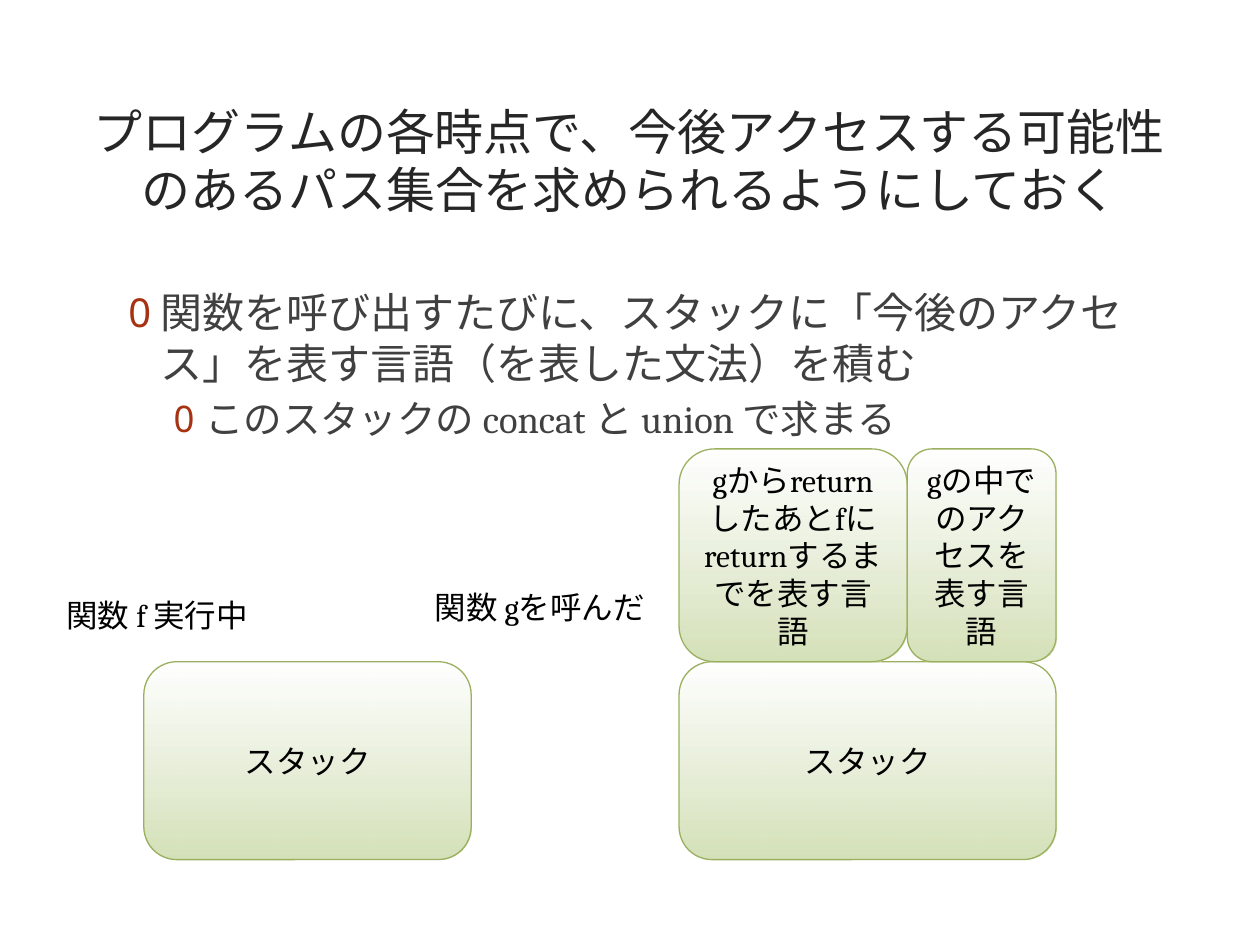
from dataclasses import dataclass

from lxml.etree import SubElement
from pptx import Presentation
from pptx.dml.color import RGBColor as RGB
from pptx.enum.lang import MSO_LANGUAGE_ID as LANG
from pptx.enum.shapes import MSO_SHAPE as SHAPE
from pptx.enum.text import MSO_ANCHOR as ANCHOR, MSO_AUTO_SIZE as FIT, PP_ALIGN as ALIGN
from pptx.oxml.ns import qn
from pptx.util import Cm, Pt


@dataclass(frozen=True)
class Theme:
    font: str = "Cambria"
    bullet_font: str = "Rage Italic"
    title: RGB = RGB(0x26, 0x26, 0x26)
    body: RGB = RGB(0x40, 0x40, 0x40)
    text: RGB = RGB(0, 0, 0)
    bullet: str = "A63212"
    box_top: RGB = RGB(0xFF, 0xFF, 0xFF)
    box_bottom: RGB = RGB(0xD5, 0xE1, 0xB9)
    box_line: RGB = RGB(0x9B, 0xB0, 0x5E)
    title_size: int = 28
    body_size: int = 24
    sub_size: int = 22
    label_size: int = 18


T = Theme()


def write(p, text, size=T.label_size, color=T.text, align=ALIGN.LEFT):
    p.alignment = align
    r = p.add_run()
    r.text = text
    r.font.name, r.font.size, r.font.color.rgb = T.font, Pt(size), color
    r.font.language_id = LANG.JAPANESE


def add_bullet(p, left, hanging):
    pPr = p._p.get_or_add_pPr()
    pPr.set("marL", str(left))
    pPr.set("indent", str(-hanging))
    SubElement(SubElement(pPr, qn("a:buClr")), qn("a:srgbClr"), val=T.bullet)
    SubElement(pPr, qn("a:buSzPct"), val="95000")
    SubElement(pPr, qn("a:buFont"), typeface=T.bullet_font)
    SubElement(pPr, qn("a:buChar"), char="0")


prs = Presentation()
prs.slide_width, prs.slide_height = Cm(25.4), Cm(19.05)
s = prs.slides.add_slide(prs.slide_layouts[5])

# Title
sp = s.shapes.title
sp.left, sp.top, sp.width, sp.height = Cm(1.52), Cm(1.22), Cm(22.33), Cm(4.01)
tf = sp.text_frame
tf.auto_size, tf.vertical_anchor = FIT.NONE, ANCHOR.MIDDLE
write(tf.paragraphs[0], "プログラムの各時点で、今後アクセスする可能性のあるパス集合を求められるようにしておく",
      size=T.title_size, color=T.title, align=ALIGN.CENTER)

# Bulleted explanation
tf = s.shapes.add_textbox(Cm(2.34), Cm(5.66), Cm(20.75), Cm(4.06)).text_frame
tf.word_wrap = True
p = tf.paragraphs[0]
add_bullet(p, Cm(0.64), Cm(0.64))
write(p, "関数を呼び出すたびに、スタックに「今後のアクセス」を表す言語（を表した文法）を積む",
      size=T.body_size, color=T.body)
p = tf.add_paragraph()
p.level = 1
p.space_before = Pt(0.2 * T.sub_size)
add_bullet(p, Cm(1.55), Cm(0.64))
write(p, "このスタックの concat と union で求まる", size=T.sub_size, color=T.body)

# Stack boxes: the base row, then the two frames resting on the right base
base_top, base_h, frame_h = 13.34, 3.99, 4.29
right, frame_w, inner_w = 13.69, 4.6, 3.0
frame_top = base_top - frame_h
for text, x, y, w, h in [
    ("スタック", 2.9, base_top, 6.6, base_h),
    ("スタック", right, base_top, frame_w + inner_w, base_h),
    ("gからreturnしたあとfにreturnするまでを表す言語", right, frame_top, frame_w, frame_h),
    ("gの中でのアクセスを表す言語", right + frame_w, frame_top, inner_w, frame_h),
]:
    sp = s.shapes.add_shape(SHAPE.ROUNDED_RECTANGLE, Cm(x), Cm(y), Cm(w), Cm(h))
    sp.shadow.inherit = False
    sp.fill.gradient()
    sp.fill.gradient_angle = 270
    for stop, color in zip(sp.fill.gradient_stops, (T.box_top, T.box_bottom)):
        stop.color.rgb = color
    top_color = sp._element.spPr.find(".//" + qn("a:srgbClr"))
    SubElement(top_color, qn("a:alpha"), val="94000")
    sp.line.color.rgb, sp.line.width = T.box_line, Pt(0.75)
    tf = sp.text_frame
    tf.word_wrap, tf.vertical_anchor = True, ANCHOR.MIDDLE
    write(tf.paragraphs[0], text, align=ALIGN.CENTER)

# State labels
for text, x, y in [("関数 f 実行中", 1.09, 11.89), ("関数 gを呼んだ", 8.51, 11.73)]:
    tf = s.shapes.add_textbox(Cm(x), Cm(y), Cm(4.8), Cm(1.02)).text_frame
    tf.word_wrap, tf.auto_size = True, FIT.SHAPE_TO_FIT_TEXT
    write(tf.paragraphs[0], text)

prs.save("out.pptx")
